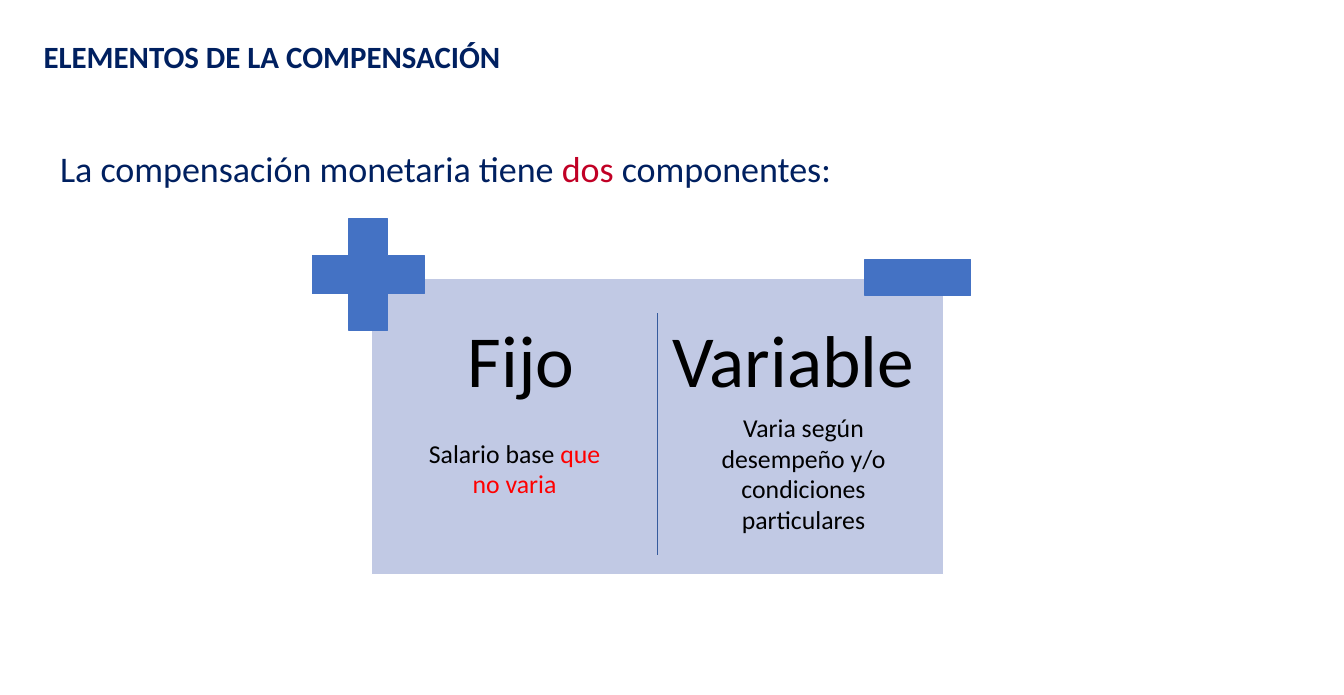
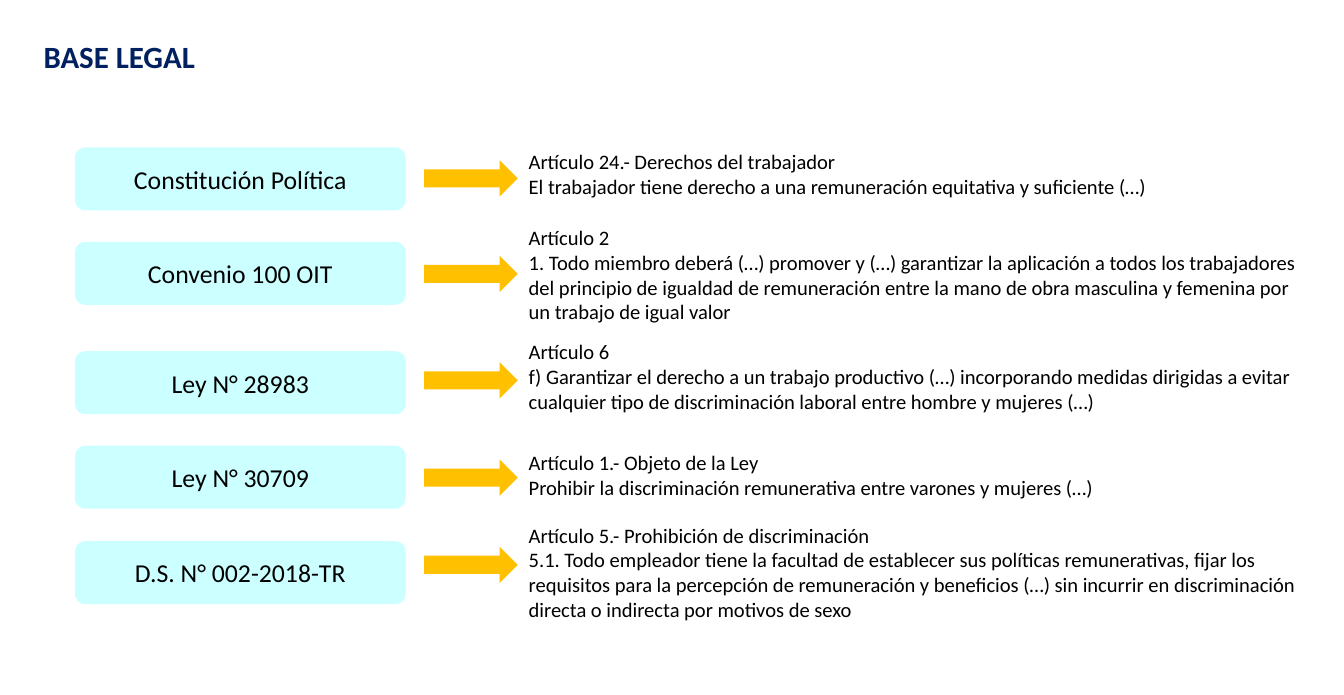
from lxml import etree
from pptx import Presentation
from pptx.dml.color import RGBColor
from pptx.enum import shapes, text
from pptx.oxml.ns import qn
from pptx.util import Inches, Pt

NAVY = RGBColor(0x00, 0x20, 0x60)
CRIMSON = RGBColor(0xC1, 0x00, 0x25)
RED = RGBColor(0xFF, 0x00, 0x00)
BLACK = RGBColor(0x00, 0x00, 0x00)
WHITE = RGBColor(0xFF, 0xFF, 0xFF)
LILAC = RGBColor(0xC1, 0xC9, 0xE4)
BLUE = RGBColor(0x44, 0x72, 0xC4)
STEEL = RGBColor(0x36, 0x5B, 0x9D)
CYAN = RGBColor(0xCC, 0xFF, 0xFF)
AMBER = RGBColor(0xFF, 0xC0, 0x00)
FONT = "Calibri"
KIND = shapes.MSO_SHAPE
LEFT, MID = text.PP_ALIGN.LEFT, text.PP_ALIGN.CENTER

INTRO = [("La compensación monetaria tiene ", NAVY), ("dos", CRIMSON),
         (" componentes:", NAVY)]
PANEL = (4.01, 3, 6.18, 3.2)
PARTS = [
    ("Fijo", 4.19, (4.46, 4.67, 2.19, 0.77),
     [("Salario base ", BLACK), ("que no varia", RED)]),
    ("Variable", 7.13, (7.58, 4.39, 2.19, 1.45),
     [("Varia según desempeño y/o condiciones particulares", BLACK)]),
]
LAWS = [
    ("Constitución Política", 1.59, 1.73, 1.56, 0.64,
     "Artículo 24.- Derechos del trabajador",
     "El trabajador tiene derecho a una remuneración equitativa y suficiente (…)"),
    ("Convenio 100 OIT", 2.61, 2.76, 2.38, 1.18,
     "Artículo 2",
     "1. Todo miembro deberá (…) promover y (…) garantizar la aplicación a todos "
     "los trabajadores del principio de igualdad de remuneración entre la mano de "
     "obra masculina y femenina por un trabajo de igual valor"),
    ("Ley N° 28983", 3.79, 3.91, 3.61, 0.91,
     "Artículo 6",
     "f) Garantizar el derecho a un trabajo productivo (…) incorporando medidas "
     "dirigidas a evitar cualquier tipo de discriminación laboral entre hombre y "
     "mujeres (…)"),
    ("Ley N° 30709", 4.81, 4.96, 4.81, 0.64,
     "Artículo 1.- Objeto de la Ley",
     "Prohibir la discriminación remunerativa entre varones y mujeres (…)"),
    ("D.S. N° 002-2018-TR", 5.84, 5.9, 5.59, 1.18,
     "Artículo 5.- Prohibición de discriminación",
     "5.1. Todo empleador tiene la facultad de establecer sus políticas "
     "remunerativas, fijar los requisitos para la percepción de remuneración y "
     "beneficios (…) sin incurrir en discriminación directa o indirecta por "
     "motivos de sexo"),
]


def place(box):
    return [Inches(n) for n in box]


def write(frame, paras, size, align=LEFT, bold=False):
    frame.word_wrap = True
    for i, runs in enumerate(paras):
        para = frame.add_paragraph() if i else frame.paragraphs[0]
        para.alignment = align
        for words, color in runs:
            run = para.add_run()
            run.text = words
            font = run.font
            font.name, font.size, font.bold = FONT, Pt(size), bold
            font.color.rgb = color


def label(slide, box, paras, size, align=LEFT):
    frame = slide.shapes.add_textbox(*place(box)).text_frame
    write(frame, paras, size, align)
    return frame


def block(slide, kind, box, fill, line=None):
    shape = slide.shapes.add_shape(kind, *place(box))
    shape.shadow.inherit = False
    shape.fill.solid()
    shape.fill.fore_color.rgb = fill
    if line is None:
        shape.line.fill.background()
    else:
        shape.line.color.rgb = line
        shape.line.width = Pt(1)
    return shape


def start(deck, words):
    slide = deck.slides.add_slide(deck.slide_layouts[5])
    title = slide.shapes.title
    title.left, title.top, title.width, title.height = place((0.37, 0.36, 13.77, 0.5))
    frame = title.text_frame
    frame.auto_size = text.MSO_AUTO_SIZE.NONE
    frame.vertical_anchor = text.MSO_ANCHOR.TOP
    write(frame, [[(words, NAVY)]], 24, bold=True)
    return slide


def pay(deck):
    slide = start(deck, "ELEMENTOS DE LA COMPENSACIÓN")
    label(slide, (0.55, 1.53, 10.42, 0.57), [INTRO], 28)
    block(slide, KIND.RECTANGLE, PANEL, LILAC, WHITE)
    plus = block(slide, KIND.CROSS, (3.37, 2.36, 1.21, 1.21), BLUE, BLUE)
    plus.adjustments[0] = 0.33
    block(slide, KIND.RECTANGLE, (9.34, 2.8, 1.14, 0.39), BLUE, BLUE)
    mid = PANEL[0] + PANEL[2] / 2
    rule = slide.shapes.add_connector(
        shapes.MSO_CONNECTOR.STRAIGHT, *place((mid, 3.38, mid, 5.99)))
    rule.line.color.rgb = STEEL
    rule.line.width = Pt(1)
    etree.SubElement(rule._element.spPr, qn("a:effectLst"))
    for head, left, box, runs in PARTS:
        frame = label(slide, (left, 3.38, 2.87, 2.73), [[(head, BLACK)]], 57, MID)
        frame.margin_left = frame.margin_right = Inches(0.12)
        frame.margin_top = frame.margin_bottom = Inches(0.12)
        frame.paragraphs[0].line_spacing = 0.9
        label(slide, box, [runs], 20, MID)


def legal(deck):
    slide = start(deck, "BASE LEGAL")
    for law, top, tip, note, tall, head, body in LAWS:
        card = block(slide, KIND.ROUNDED_RECTANGLE, (0.81, top, 3.57, 0.68), CYAN)
        card.text_frame.vertical_anchor = text.MSO_ANCHOR.MIDDLE
        write(card.text_frame, [[(law, BLACK)]], 20, MID)
        label(slide, (5.61, note, 8.54, tall),
              [[(head, BLACK)], [(body, BLACK)]], 16)
        block(slide, KIND.RIGHT_ARROW, (4.58, tip, 1.01, 0.39), AMBER)


def main():
    deck = Presentation()
    deck.slide_width, deck.slide_height = Inches(14.51), Inches(7.5)
    pay(deck)
    legal(deck)
    deck.save("out.pptx")


if __name__ == "__main__":
    main()
